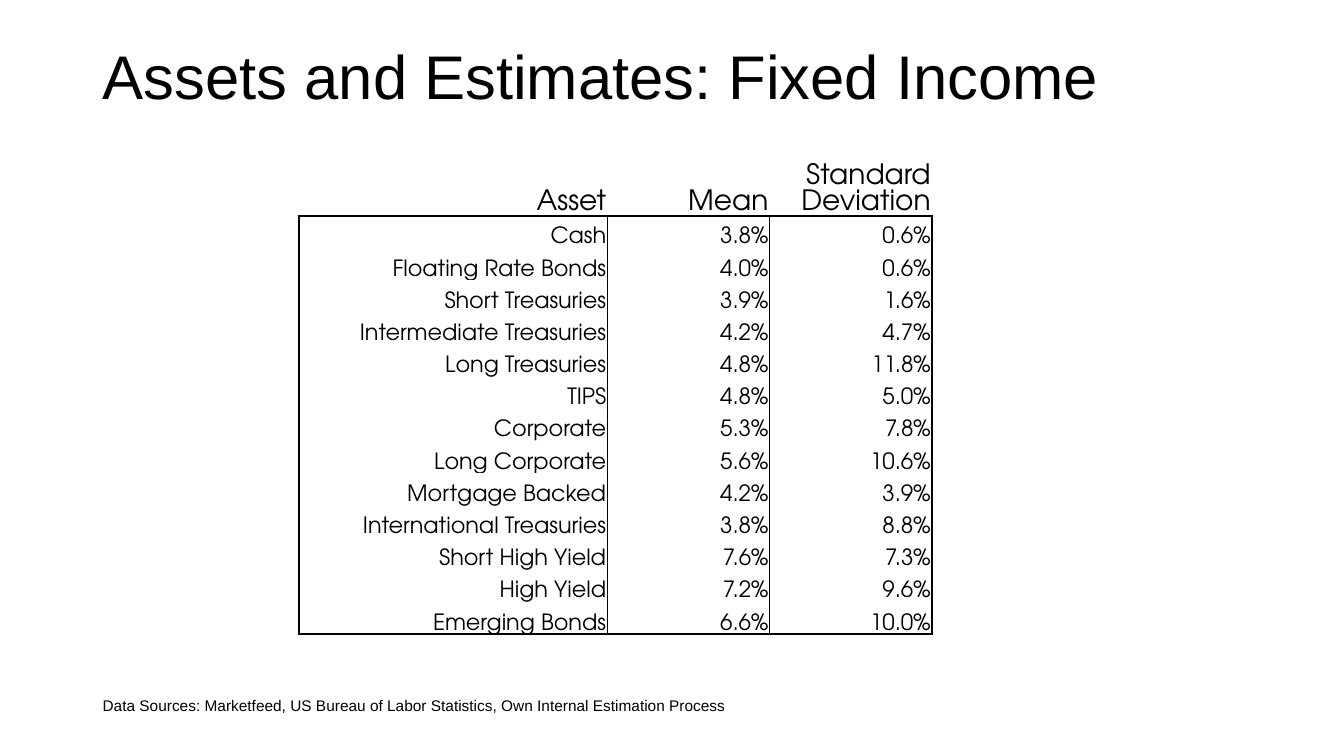
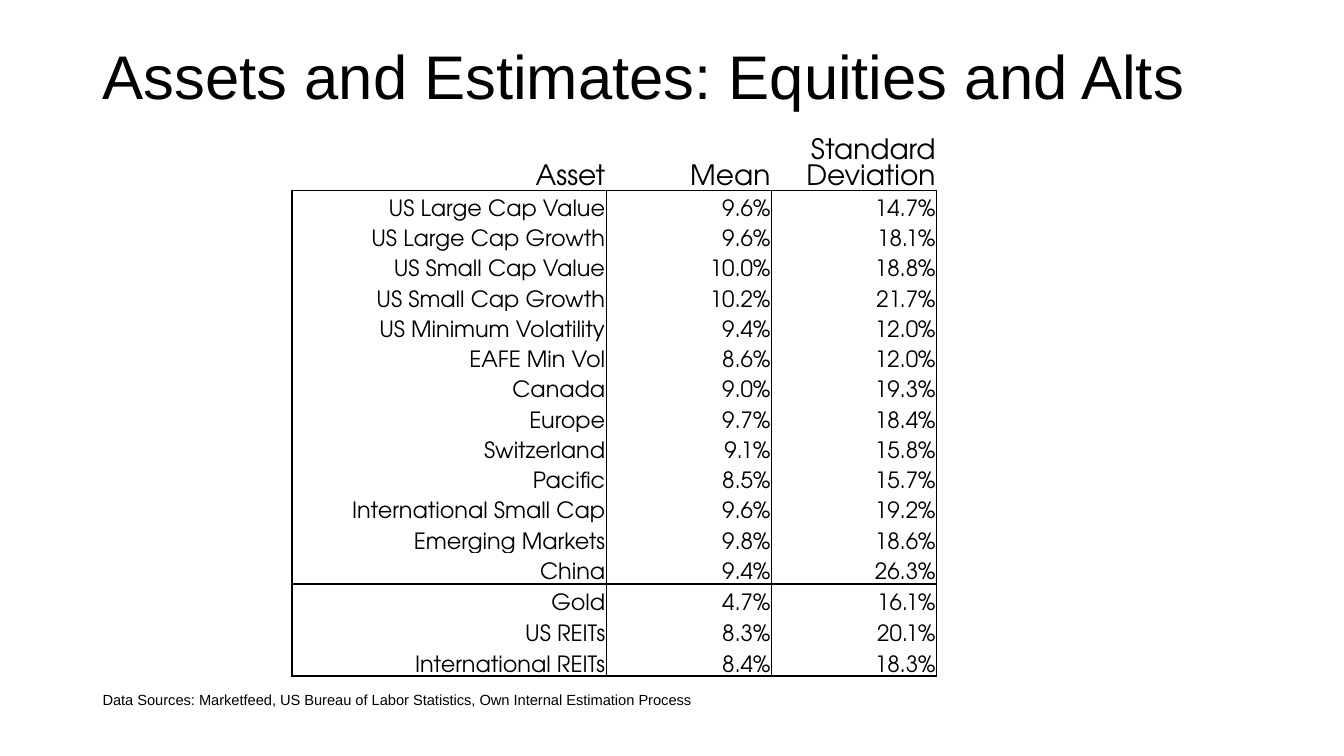
import pptx
import pptx.util
import pptx.dml.color
import pptx.enum.text
import pptx.oxml
import pptx.oxml.ns
from pptx.util import Pt

# Content: groups of (asset, mean, standard deviation)
HEADINGS = ("Asset", "Mean", "Standard Deviation")
SOURCES = ("Data Sources: Marketfeed, US Bureau of Labor Statistics, "
           "Own Internal Estimation Process")

FIXED_INCOME = [
    ("Cash", "3.8%", "0.6%"),
    ("Floating Rate Bonds", "4.0%", "0.6%"),
    ("Short Treasuries", "3.9%", "1.6%"),
    ("Intermediate Treasuries", "4.2%", "4.7%"),
    ("Long Treasuries", "4.8%", "11.8%"),
    ("TIPS", "4.8%", "5.0%"),
    ("Corporate", "5.3%", "7.8%"),
    ("Long Corporate", "5.6%", "10.6%"),
    ("Mortgage Backed", "4.2%", "3.9%"),
    ("International Treasuries", "3.8%", "8.8%"),
    ("Short High Yield", "7.6%", "7.3%"),
    ("High Yield", "7.2%", "9.6%"),
    ("Emerging Bonds", "6.6%", "10.0%"),
]
EQUITIES = [
    ("US Large Cap Value", "9.6%", "14.7%"),
    ("US Large Cap Growth", "9.6%", "18.1%"),
    ("US Small Cap Value", "10.0%", "18.8%"),
    ("US Small Cap Growth", "10.2%", "21.7%"),
    ("US Minimum Volatility", "9.4%", "12.0%"),
    ("EAFE Min Vol", "8.6%", "12.0%"),
    ("Canada", "9.0%", "19.3%"),
    ("Europe", "9.7%", "18.4%"),
    ("Switzerland", "9.1%", "15.8%"),
    ("Pacific", "8.5%", "15.7%"),
    ("International Small Cap", "9.6%", "19.2%"),
    ("Emerging Markets", "9.8%", "18.6%"),
    ("China", "9.4%", "26.3%"),
]
ALTERNATIVES = [
    ("Gold", "4.7%", "16.1%"),
    ("US REITs", "8.3%", "20.1%"),
    ("International REITs", "8.4%", "18.3%"),
]

# Lengths in points; each group pairs a row height with its rows
SLIDES = [
    {"title": "Assets and Estimates: Fixed Income", "title_width": 738,
     "table_at": (213.3, 98.7), "columns": (220.4, 115.9, 115.9),
     "heading_height": 55.6, "groups": [(23, FIXED_INCOME)],
     "sources_top": 494, "sources_width": 821.5, "sources_size": 11},
    {"title": "Assets and Estimates: Equities and Alts", "title_width": 828.7,
     "table_at": (208.4, 84.3), "columns": (224.6, 118, 118),
     "heading_height": 51.8, "groups": [(21.6, EQUITIES), (22.1, ALTERNATIVES)],
     "sources_top": 489.6, "sources_width": 866.9, "sources_size": 10.5},
]

# Shared style
BLACK, WHITE = "000000", "FFFFFF"
TEXT_FONT, TABLE_FONT = "Arial", "TeX Gyre Adventor"
LEFT = 66.2
THICK, THIN = 1.5, 0.5
ALIGN = pptx.enum.text.PP_ALIGN
ANCHOR = pptx.enum.text.MSO_ANCHOR
AUTO_SIZE = pptx.enum.text.MSO_AUTO_SIZE


def color(value):
    return pptx.dml.color.RGBColor.from_string(value)


def write(text_frame, text, font_name, size, align):
    text_frame.text = text
    text_frame.word_wrap = True
    paragraph = text_frame.paragraphs[0]
    paragraph.alignment = align
    paragraph.font.name = font_name
    paragraph.font.size = Pt(size)
    paragraph.font.color.rgb = color(BLACK)
    return paragraph


def place(shape, left, top, width, height):
    shape.left, shape.top = Pt(left), Pt(top)
    shape.width, shape.height = Pt(width), Pt(height)


def set_borders(cell, left=0, right=0, top=0, bottom=0):
    """Give each side a line of the stated width, or none for 0."""
    properties = cell._tc.get_or_add_tcPr()
    sides = (("lnL", left), ("lnR", right), ("lnT", top), ("lnB", bottom))
    for position, (tag, width) in enumerate(sides):
        paint = (f'<a:solidFill><a:srgbClr val="{BLACK}"/></a:solidFill>'
                 if width else "<a:noFill/>")
        properties.insert(position, pptx.oxml.parse_xml(
            f'<a:{tag} {pptx.oxml.ns.nsdecls("a")} w="{int(Pt(width))}">'
            f'{paint}</a:{tag}>'))


def fill_cell(cell, text, size):
    write(cell.text_frame, text, TABLE_FONT, size, ALIGN.RIGHT)
    cell.vertical_anchor = ANCHOR.BOTTOM
    cell.margin_left = cell.margin_right = cell.margin_top = Pt(0.7)
    cell.margin_bottom = 0


def add_estimates(slide, content):
    columns, groups = content["columns"], content["groups"]
    heights = [content["heading_height"]]
    for row_height, rows in groups:
        heights += [row_height] * len(rows)
    left, top = content["table_at"]
    table = slide.shapes.add_table(
        len(heights), len(columns), Pt(left), Pt(top),
        Pt(sum(columns)), Pt(sum(heights))).table
    table.first_row = table.horz_banding = False
    for column, width in zip(table.columns, columns):
        column.width = Pt(width)
    for row, height in zip(table.rows, heights):
        row.height = Pt(height)

    # Headings
    for cell, heading in zip(table.rows[0].cells, HEADINGS):
        fill_cell(cell, heading, 20)
        cell.fill.background()
        set_borders(cell, bottom=THICK)

    # Groups, each in a thick frame with thin lines between columns
    last_column = len(columns) - 1
    row_number = 1
    for _, rows in groups:
        for position, values in enumerate(rows):
            for column_number, value in enumerate(values):
                cell = table.cell(row_number, column_number)
                fill_cell(cell, value, 16)
                cell.fill.solid()
                cell.fill.fore_color.rgb = color(WHITE)
                set_borders(
                    cell,
                    left=THICK if column_number == 0 else THIN,
                    right=THICK if column_number == last_column else THIN,
                    top=THICK if position == 0 else 0,
                    bottom=THICK if position == len(rows) - 1 else 0)
            row_number += 1


def add_slide(presentation, content):
    slide = presentation.slides.add_slide(presentation.slide_layouts[5])

    # Title
    title = slide.shapes.title
    place(title, LEFT, 28.8, content["title_width"], 55.4)
    paragraph = write(title.text_frame, content["title"], TEXT_FONT, 44, ALIGN.LEFT)
    paragraph.line_spacing = 0.9
    title.text_frame.vertical_anchor = ANCHOR.MIDDLE
    title.text_frame.auto_size = AUTO_SIZE.NONE

    # Sources
    sources = slide.shapes.add_textbox(
        Pt(LEFT), Pt(content["sources_top"]), Pt(content["sources_width"]), Pt(20.9))
    write(sources.text_frame, SOURCES, TEXT_FONT, content["sources_size"], ALIGN.LEFT)
    sources.text_frame.auto_size = AUTO_SIZE.SHAPE_TO_FIT_TEXT

    add_estimates(slide, content)


def main():
    presentation = pptx.Presentation()
    presentation.slide_width, presentation.slide_height = Pt(960), Pt(540)
    for content in SLIDES:
        add_slide(presentation, content)
    presentation.save("out.pptx")


if __name__ == "__main__":
    main()
